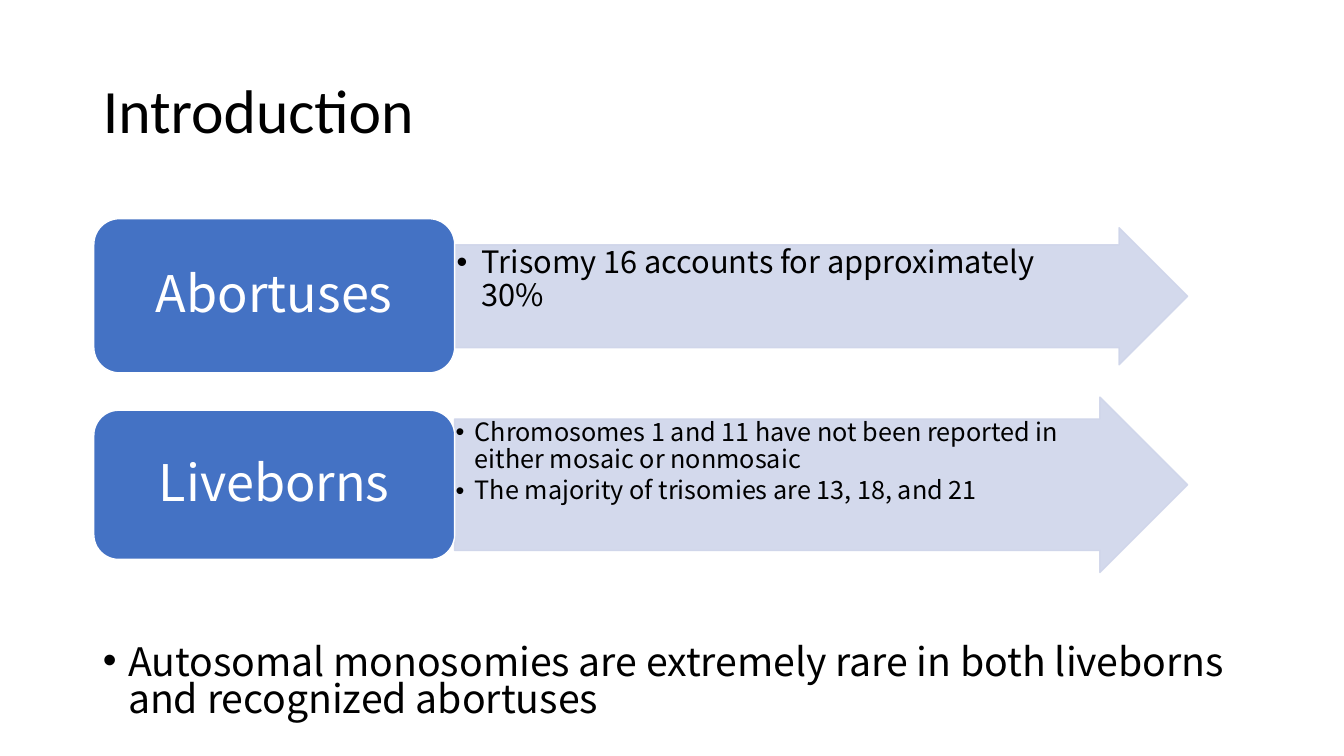
"""Build the introduction slide on abortuses and liveborns."""
from dataclasses import dataclass

from lxml import etree
from pptx import Presentation, util as u
from pptx.dml.color import RGBColor
from pptx.enum import shapes, text
from pptx.oxml.ns import qn

WIDE, HIGH = 13.33, 7.5
LEFT, SPLIT, RIGHT = 6.98, 33.83, 88.37
NOTO = "Noto Sans CJK SC"
BLUE, PALE, WHITE, BLACK = "4472C4", "CFD5EA", "FFFFFF", "000000"


@dataclass
class Style:
    """Text format, with the indent in inches."""
    size: float
    font: str = NOTO
    tint: str = BLACK
    indent: float = 0
    level: int = 0
    line: float = 0.9
    before: float = 0
    after: float = 0
    align: text.PP_ALIGN = text.PP_ALIGN.LEFT


@dataclass
class Row:
    """A label with its arrow; tops and heights are percent of the slide."""
    label: str
    points: list[str]
    top: float
    height: float
    tip: float
    span: float
    style: Style
    inset: float


ROWS = [
    Row("Abortuses", ["Trisomy 16 accounts for approximately 30%"],
        28.93, 20.4, 30.13, 18.13, Style(22, indent=0.25, level=1), 0.02),
    Row("Liveborns",
        ["Chromosomes 1 and 11 have not been reported in either mosaic or nonmosaic",
         "The majority of trisomies are 13, 18, and 21"],
        54.27, 19.73, 52.53, 23.2,
        Style(18, indent=0.19, level=1, after=2.7), 0.01),
]


def color(code: str) -> RGBColor:
    """Turn a hex string into a colour."""
    return RGBColor.from_string(code)


def area(left: float, top: float, width: float, height: float) -> list[int]:
    """Turn percent of the slide into lengths."""
    return [u.Inches(share * side / 100) for share, side in
            zip((left, top, width, height), (WIDE, HIGH, WIDE, HIGH))]


def put(target, values: dict) -> None:
    """Set each value as an attribute."""
    for name, value in values.items():
        setattr(target, name, value)


def write(shape, lines: list[str], style: Style, anchor, pads: tuple) -> None:
    """Fill a shape with formatted paragraphs."""
    frame = shape.text_frame
    frame.text = "\n".join(lines)
    sides = ("margin_left", "margin_top", "margin_right", "margin_bottom")
    put(frame, {"word_wrap": True, "auto_size": text.MSO_AUTO_SIZE.NONE,
                "vertical_anchor": anchor,
                **{side: u.Inches(pad) for side, pad in zip(sides, pads)}})
    for para in frame.paragraphs:
        put(para, {"alignment": style.align, "level": style.level,
                   "line_spacing": style.line,
                   "space_before": u.Pt(style.before),
                   "space_after": u.Pt(style.after)})
        font = para.runs[0].font
        put(font, {"name": style.font, "size": u.Pt(style.size)})
        font.color.rgb = color(style.tint)
        if style.indent:
            props = para._p.get_or_add_pPr()
            props.set("marL", str(u.Inches(style.indent)))
            props.set("indent", str(-u.Inches(style.indent)))
            etree.SubElement(props, qn("a:buFont"), typeface="Arial")
            etree.SubElement(props, qn("a:buChar"), char="•")


def block(slide, kind, box: list[int], fill: str, edge: str):
    """Add a filled shape with a thin edge."""
    shape = slide.shapes.add_shape(kind, *box)
    shape.shadow.inherit = False
    shape.fill.solid()
    shape.fill.fore_color.rgb = color(fill)
    shape.line.color.rgb = color(edge)
    shape.line.width = u.Pt(1)
    return shape


def draw(slide, row: Row) -> None:
    """Draw one arrow and the label before it."""
    arrow = block(slide, shapes.MSO_SHAPE.RIGHT_ARROW,
                  area(SPLIT, row.tip, RIGHT - SPLIT, row.span), PALE, PALE)
    arrow.adjustments[0] = 0.75
    for tone in arrow.element.spPr.iter(qn("a:srgbClr")):
        etree.SubElement(tone, qn("a:alpha"), val="90000")
    pad = row.inset
    room = pad + row.span / 100 * HIGH / 4
    write(arrow, row.points, row.style, text.MSO_ANCHOR.TOP,
          (pad, pad, room, pad))
    label = block(slide, shapes.MSO_SHAPE.ROUNDED_RECTANGLE,
                  area(LEFT, row.top, SPLIT - LEFT, row.height), BLUE, WHITE)
    write(label, [row.label],
          Style(36, tint=WHITE, align=text.PP_ALIGN.CENTER),
          text.MSO_ANCHOR.MIDDLE, (0.15, 0.07, 0.15, 0.07))


def main() -> None:
    """Build and save the slide."""
    deck = Presentation()
    put(deck, {"slide_width": u.Inches(WIDE), "slide_height": u.Inches(HIGH)})
    slide = deck.slides.add_slide(deck.slide_layouts[1])
    title, body = slide.placeholders
    pads = (0.1, 0.05, 0.1, 0.05)
    sides = ("left", "top", "width", "height")
    put(title, dict(zip(sides, area(6.9, 5.33, 86.27, 19.33))))
    put(body, dict(zip(sides, area(6.9, 84.8, 86.27, 12.13))))
    write(title, ["Introduction"], Style(44, font="Calibri"),
          text.MSO_ANCHOR.MIDDLE, pads)
    write(body, ["Autosomal monosomies are extremely rare in both liveborns "
                 "and recognized abortuses"],
          Style(28, indent=0.25, line=0.8, before=10),
          text.MSO_ANCHOR.TOP, pads)
    for row in ROWS:
        draw(slide, row)
    deck.save("out.pptx")


if __name__ == "__main__":
    main()
